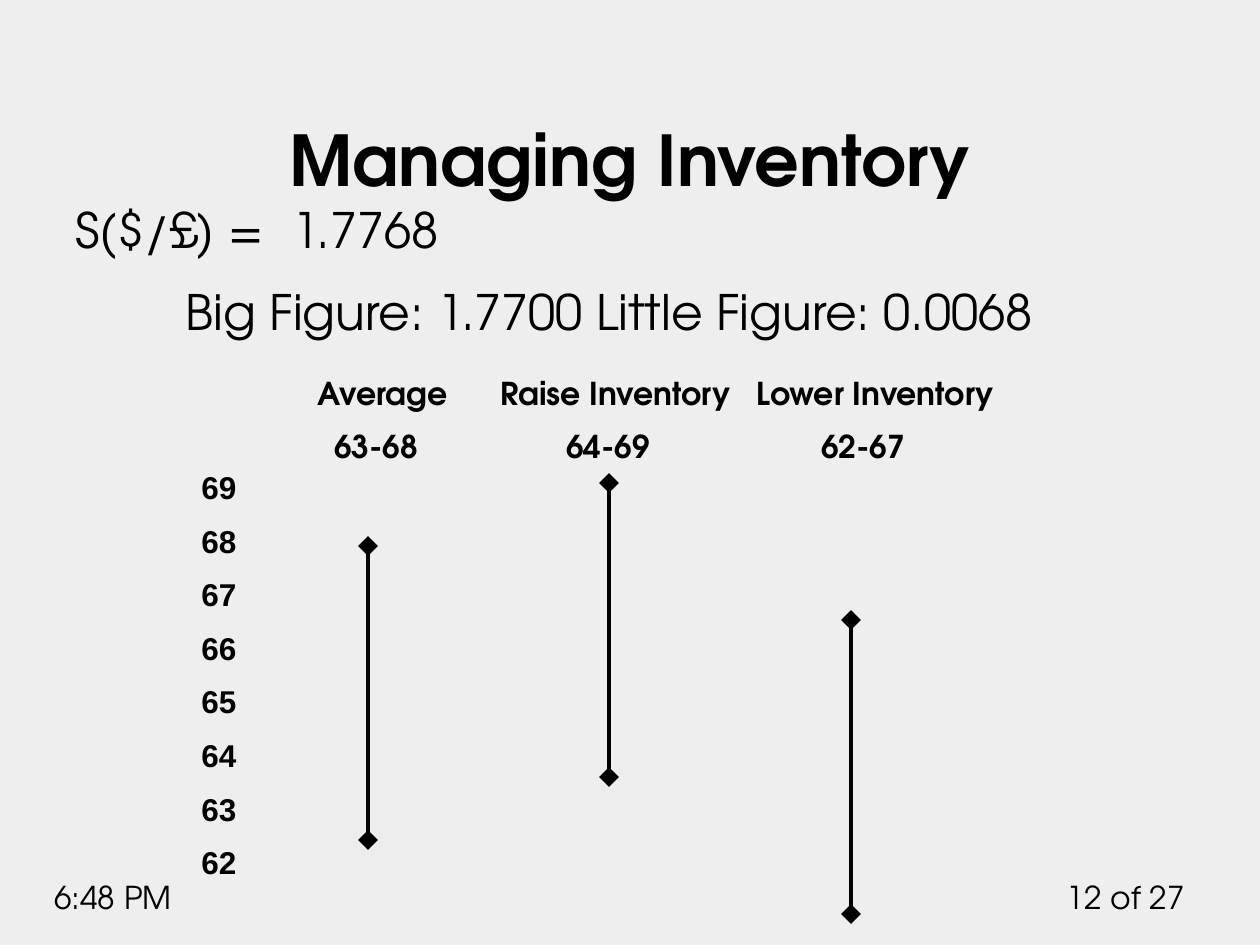
"""Build the Managing Inventory slide."""
from dataclasses import dataclass

from lxml import etree
from pptx import Presentation
from pptx.dml.color import RGBColor
from pptx.enum.shapes import MSO_CONNECTOR
from pptx.enum.text import MSO_ANCHOR, MSO_AUTO_SIZE, PP_ALIGN
from pptx.oxml.ns import qn
from pptx.shapes.base import BaseShape
from pptx.slide import Slide
from pptx.util import Emu, Pt

EMU_PER_PX = 914400 / 126
INK = RGBColor(0x00, 0x00, 0x00)
PAPER = RGBColor(0xEE, 0xEE, 0xEE)
DISPLAY_FONT = "TeX Gyre Adventor"
SCALE_FONT = "Arial"
STRAIGHT = MSO_CONNECTOR.STRAIGHT
TOP, BOTTOM = MSO_ANCHOR.TOP, MSO_ANCHOR.BOTTOM
NO_FIT = MSO_AUTO_SIZE.NONE
LEFT, CENTER, RIGHT = PP_ALIGN.LEFT, PP_ALIGN.CENTER, PP_ALIGN.RIGHT
QUOTE_SPAN = 294


@dataclass(frozen=True)
class Area:
    left: int
    top: int
    width: int
    height: int


@dataclass(frozen=True)
class Line:
    text: str
    tabs: tuple[int, ...] = ()
    hang: int = 0


@dataclass(frozen=True)
class Style:
    size: float = 18
    font: str = DISPLAY_FONT
    bold: bool = False
    align: PP_ALIGN = LEFT
    anchor: MSO_ANCHOR = TOP
    gap: float = 0
    spacing: float = 1.0


@dataclass(frozen=True)
class Quote:
    x: int
    top: int


QUOTES = (Quote(368, 546), Quote(609, 483), Quote(851, 620))


def px(length: int) -> Emu:
    """Turn pixels into EMU."""
    return Emu(round(length * EMU_PER_PX))


def write(box: BaseShape, area: Area, lines: list[Line], style: Style) -> None:
    """Place a text shape and fill it with styled lines."""
    box.left, box.top = px(area.left), px(area.top)
    box.width, box.height = px(area.width), px(area.height)
    frame = box.text_frame
    frame.word_wrap = True
    frame.auto_size = NO_FIT
    frame.vertical_anchor = style.anchor
    frame.text = "\n".join(line.text for line in lines)
    for index, (para, line) in enumerate(zip(frame.paragraphs, lines)):
        properties = para._p.get_or_add_pPr()
        if line.hang:
            properties.set("marL", str(px(line.hang)))
            properties.set("indent", str(px(-line.hang)))
        etree.SubElement(properties, qn("a:buNone"))
        if line.tabs:
            stops = etree.SubElement(properties, qn("a:tabLst"))
            for tab in line.tabs:
                etree.SubElement(stops, qn("a:tab"), pos=str(px(tab)), algn="l")
        para.alignment = style.align
        para.line_spacing = style.spacing
        para.space_before = Pt(style.gap if index else 0)
        for span in para.runs:
            span.font.name = style.font
            span.font.size = Pt(style.size)
            span.font.bold = style.bold
            span.font.color.rgb = INK


def add_text(slide: Slide, area: Area, lines: list[Line], style: Style) -> None:
    """Add a text box with styled lines."""
    box = slide.shapes.add_textbox(0, 0, 0, 0)
    write(box, area, lines, style)


def add_quote(slide: Slide, quote: Quote) -> None:
    """Draw a bid-ask range with a diamond at each end."""
    x = px(quote.x)
    line = slide.shapes.add_connector(
        STRAIGHT, x, px(quote.top), x, px(quote.top + QUOTE_SPAN))
    line.line.color.rgb = INK
    line.line.width = Pt(2.25)
    outline = line.line._get_or_add_ln()
    for end in ("a:headEnd", "a:tailEnd"):
        etree.SubElement(outline, qn(end), type="diamond", w="lg", len="lg")
    etree.SubElement(line._element.spPr, qn("a:effectLst"))


def main() -> None:
    """Build and save the deck."""
    deck = Presentation()
    deck.slide_width, deck.slide_height = px(1260), px(945)
    page = deck.slides.add_slide(deck.slide_layouts[1])
    page.background.fill.solid()
    page.background.fill.fore_color.rgb = PAPER

    write(page.shapes.title, Area(63, 49, 1134, 158), [Line("Managing Inventory")],
          Style(size=40, bold=True, align=CENTER, anchor=BOTTOM))
    write(page.placeholders[1], Area(63, 209, 1134, 147),
          [Line("S($/£) =\t1.7768", hang=28),
           Line("\t\tBig Figure: 1.7700 Little Figure: 0.0068", hang=47)],
          Style(size=27.9, gap=23.4, spacing=0.7))

    add_text(page, Area(305, 368, 819, 108),
             [Line("Average\tRaise Inventory\tLower Inventory", (183, 439)),
              Line("\t63-68\t64-69\t62-67", (17, 249, 504))],
             Style(bold=True, gap=8.5))
    add_text(page, Area(189, 462, 95, 449),
             [Line(str(pips)) for pips in range(69, 61, -1)],
             Style(font=SCALE_FONT, bold=True, gap=9))
    for quote in QUOTES:
        add_quote(page, quote)

    add_text(page, Area(42, 872, 199, 50), [Line("6:48 PM")], Style())
    add_text(page, Area(1050, 872, 147, 50), [Line("12 of 27")], Style(align=RIGHT))
    deck.save("out.pptx")


if __name__ == "__main__":
    main()
